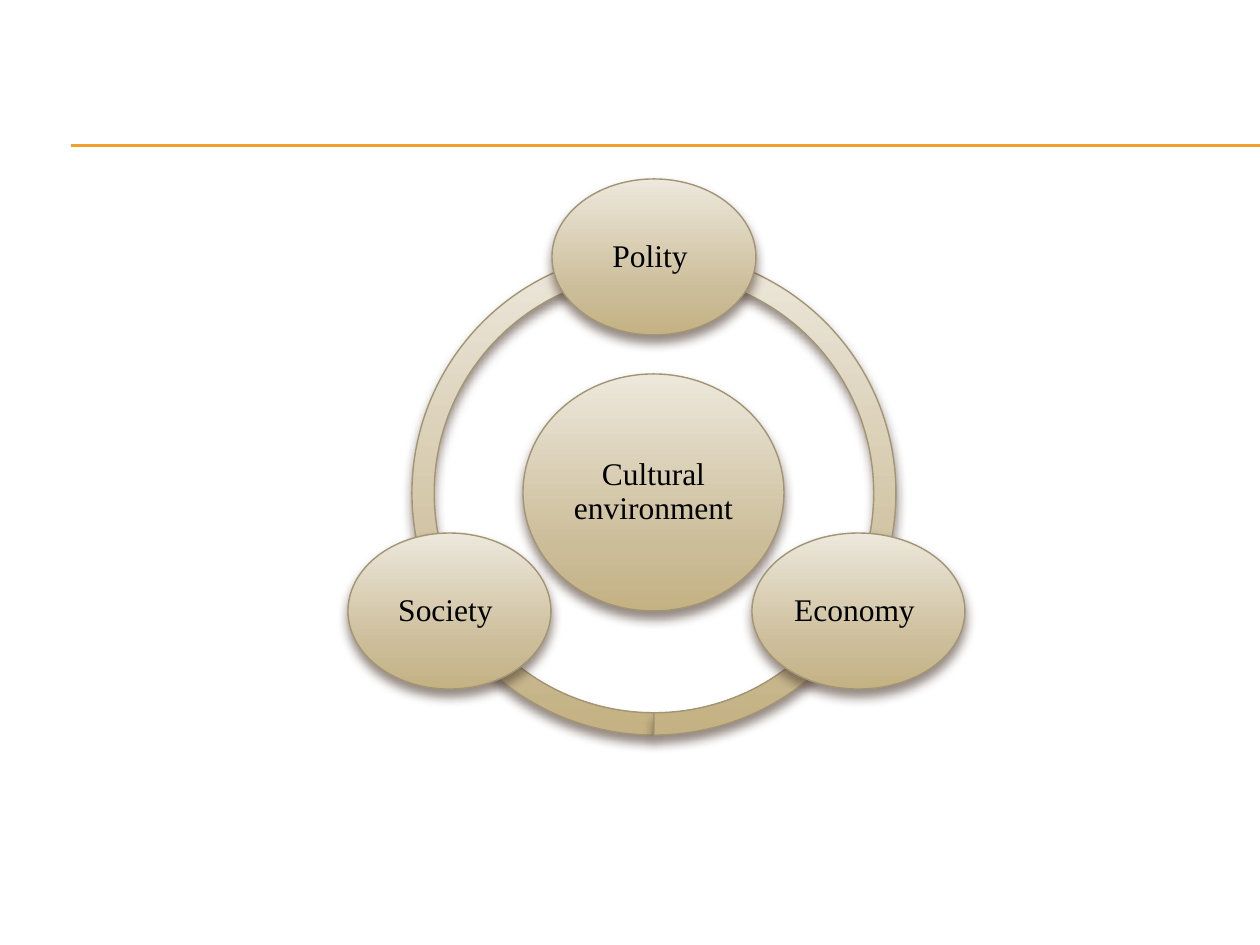
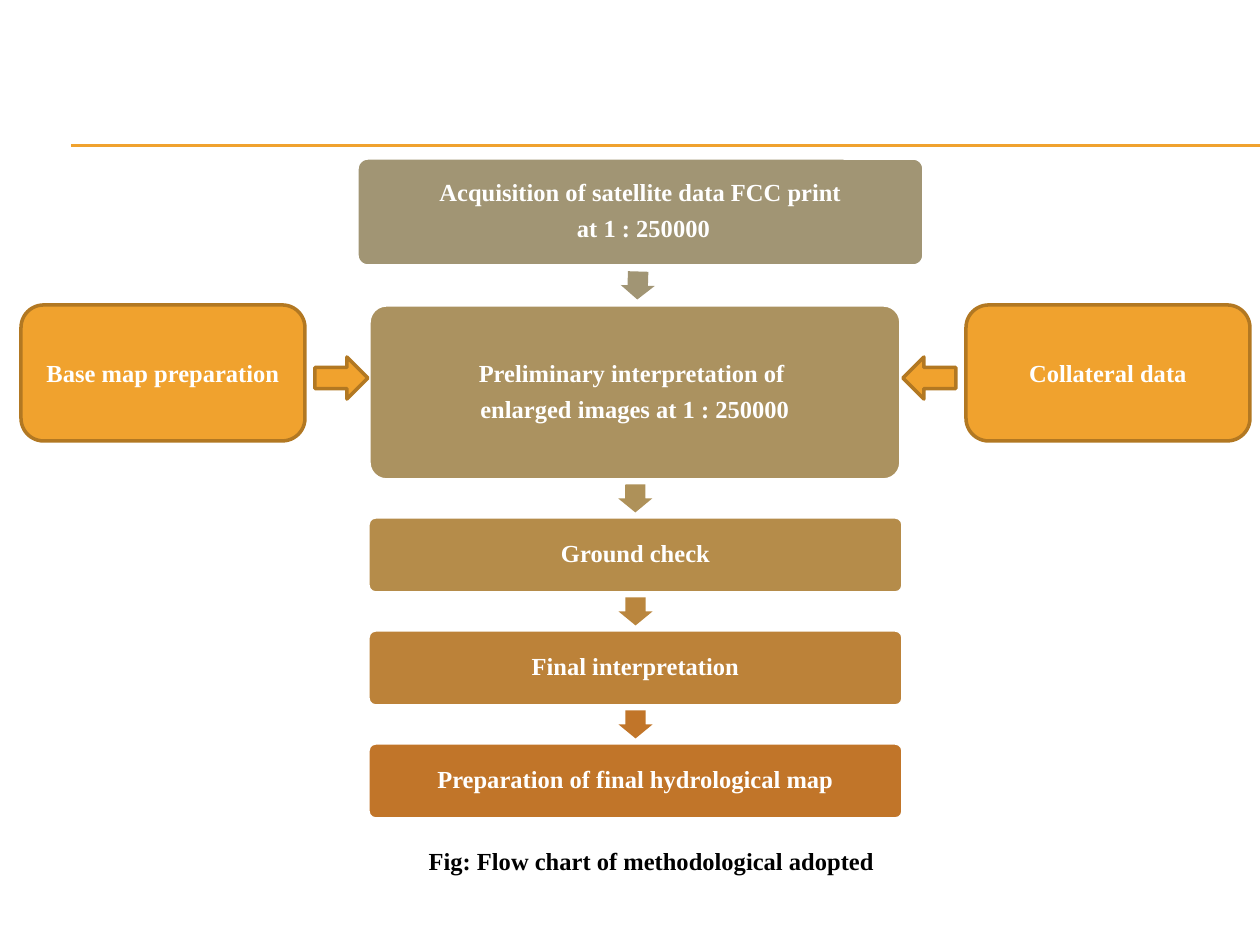
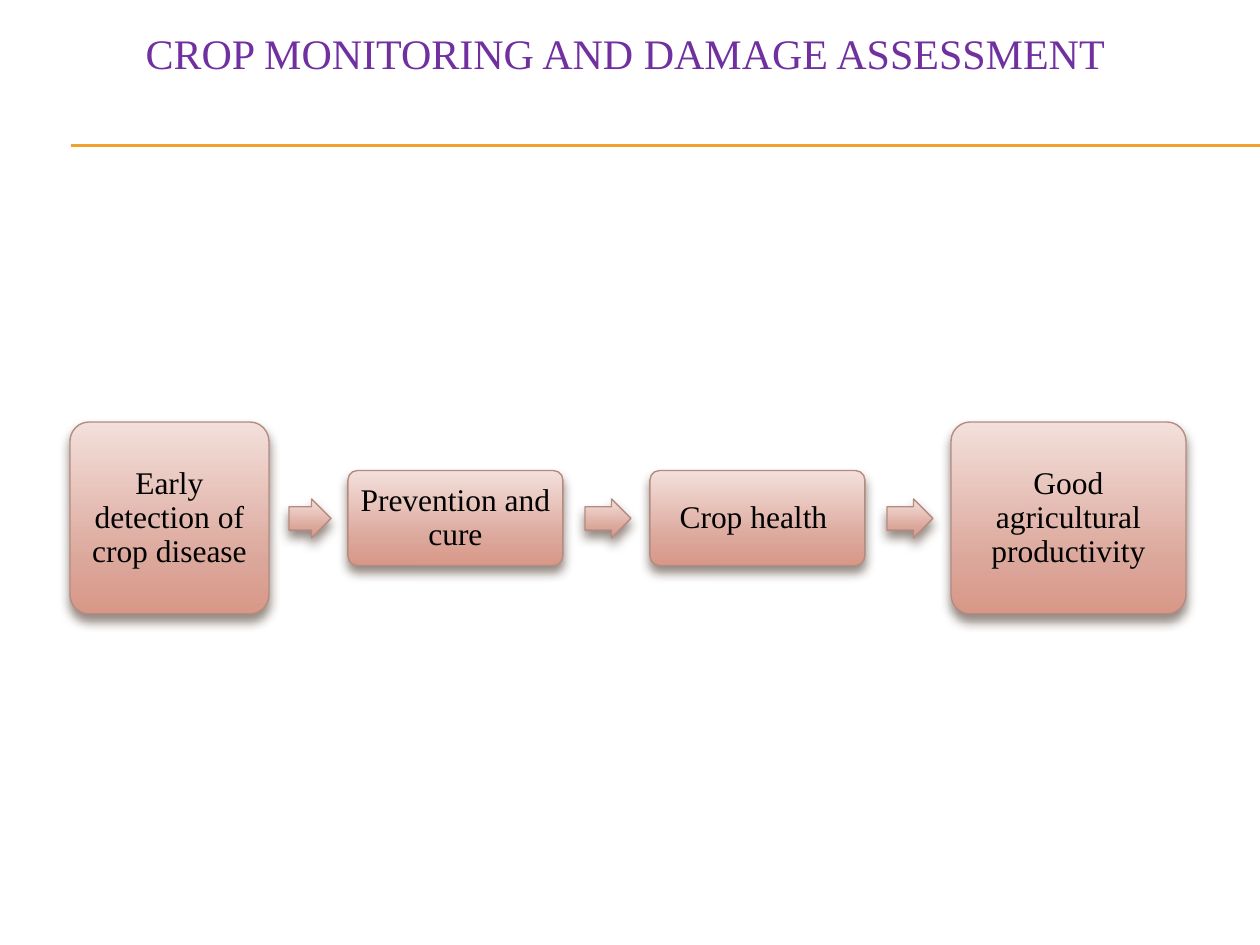
from copy import deepcopy
from math import atan2, degrees

from lxml.etree import SubElement
from pptx import Presentation
from pptx.dml.color import RGBColor
from pptx.enum.shapes import MSO_CONNECTOR, MSO_SHAPE as SHAPE
from pptx.enum.text import MSO_ANCHOR, PP_ALIGN
from pptx.oxml import parse_xml
from pptx.oxml.ns import nsdecls, qn
from pptx.util import Emu, Pt

PX = 914400 / 126
FONT = "Times New Roman"

WHITE = RGBColor(0xFF, 0xFF, 0xFF)
BLACK = RGBColor(0x00, 0x00, 0x00)
PURPLE = RGBColor(0x70, 0x30, 0xA0)
ORANGE = RGBColor(0xF0, 0xA2, 0x2E)
DARK_ORANGE = RGBColor(0xB2, 0x78, 0x22)
KHAKI = RGBColor(0xA1, 0x95, 0x74)
ROSE = RGBColor(0xB5, 0x8B, 0x80)
OLIVE = RGBColor(0xAB, 0x92, 0x60)
OCHRE = RGBColor(0xB5, 0x8C, 0x4A)
BRONZE = RGBColor(0xBC, 0x82, 0x39)
RUST = RGBColor(0xC1, 0x75, 0x29)
ARROW_OLIVE = RGBColor(0xAE, 0x91, 0x59)
ARROW_BRONZE = RGBColor(0xBA, 0x86, 0x3E)
SAND_STOPS = [(0, RGBColor(0xED, 0xE8, 0xDC)), (0.72, RGBColor(0xCC, 0xBD, 0x99)),
              (1, RGBColor(0xC4, 0xB2, 0x84))]
ROSE_STOPS = [(0, RGBColor(0xF3, 0xE0, 0xDB)), (0.72, RGBColor(0xDC, 0xA7, 0x9B)),
              (1, RGBColor(0xD8, 0x97, 0x87))]

SHADOW = (f'<a:outerShdw {nsdecls("a")} blurRad="76200" dist="50800" dir="5400000" '
          'rotWithShape="0"><a:srgbClr val="4E3B30"><a:alpha val="60000"/>'
          '</a:srgbClr></a:outerShdw>')


def draw(slide, kind, box, fill, line=None, width=2, adj=()):
    """Add a shape at box (px); a list of stops as fill gives a shadowed gradient."""
    sp = slide.shapes.add_shape(kind, *[Emu(round(v * PX)) for v in box])
    sp.shadow.inherit = False
    for i, value in enumerate(adj):
        sp.adjustments[i] = value
    if isinstance(fill, list):
        sp.fill.gradient()
        sp.fill.gradient_angle = 270
        gs_lst = sp._element.xpath(".//a:gsLst")[0]
        gs_lst.append(deepcopy(gs_lst[-1]))
        for stop, (position, color) in zip(sp.fill.gradient_stops, fill):
            stop.position = position
            stop.color.rgb = color
        sp._element.spPr.find(qn("a:effectLst")).append(parse_xml(SHADOW))
    else:
        sp.fill.solid()
        sp.fill.fore_color.rgb = fill
    if line is None:
        sp.line.fill.background()
    else:
        sp.line.color.rgb = line
        sp.line.width = Pt(width)
    return sp


def write(sp, lines, size, color, bold=False, inset=None, spacing=None, after=None):
    """Write centred paragraphs; inset is (sides, top and bottom) in px."""
    tf = sp.text_frame
    tf.word_wrap = True
    if inset:
        side, edge = [Emu(round(v * PX)) for v in inset]
        tf.margin_left = tf.margin_right = side
        tf.margin_top = tf.margin_bottom = edge
    for i, line in enumerate(lines):
        p = tf.add_paragraph() if i else tf.paragraphs[0]
        p.alignment = PP_ALIGN.CENTER
        p.line_spacing = spacing
        if after and i < len(lines) - 1:
            p.space_after = Pt(after)
        r = p.add_run()
        r.text = line
        r.font.color.rgb = color
        for name, value in {"name": FONT, "size": Pt(size), "bold": bold}.items():
            setattr(r.font, name, value)


prs = Presentation()
prs.slide_width, prs.slide_height = Emu(round(1260 * PX)), Emu(round(945 * PX))
slides = [prs.slides.add_slide(prs.slide_layouts[6]) for _ in range(3)]
culture, method, crops = slides

# Header rules on every slide
for s in slides:
    for y in (145, 146):
        ends = [Emu(round(v * PX)) for v in (71, y, 1260, y)]
        rule = s.shapes.add_connector(MSO_CONNECTOR.STRAIGHT, *ends)
        rule.line.color.rgb = ORANGE
        rule.line.width = Pt(0.75)
        SubElement(rule._element.spPr, qn("a:effectLst"))

# Cultural environment ring
for start, end in [(90, 162), (18, 90), (162, 18)]:
    # An angle adjustment is stored in 0.6 units per degree
    draw(culture, SHAPE.BLOCK_ARC, (412, 251, 484, 484), SAND_STOPS, KHAKI, 0.79,
         (start * 0.6, end * 0.6, 0.046))
for label, box in [("Cultural environment", (523, 374, 261, 237)),
                   ("Polity ", (552, 179, 204, 156)),
                   ("Economy ", (752, 533, 213, 156)),
                   ("Society ", (348, 533, 203, 156))]:
    sp = draw(culture, SHAPE.OVAL, box, SAND_STOPS, KHAKI, 0.79)
    write(sp, [label], 18, BLACK, inset=(4, 4), spacing=0.9)

# Flow chart of the method: each arrow sits mid-gap and points to the next step
steps = [
    (["Acquisition of satellite data FCC print", " at 1 : 250000"],
     (357, 158, 567, 108), KHAKI, KHAKI),
    (["Preliminary interpretation of ", "enlarged images at 1 : 250000"],
     (369, 305, 532, 175), OLIVE, ARROW_OLIVE),
    (["Ground check"], (368, 517, 535, 76), OCHRE, ARROW_BRONZE),
    (["Final interpretation"], (368, 630, 535, 76), BRONZE, RUST),
    (["Preparation of final hydrological map"], (368, 743, 535, 76), RUST, None),
]
for lines, box, color, _ in steps:
    sp = draw(method, SHAPE.ROUNDED_RECTANGLE, box, color, WHITE, adj=[0.1])
    write(sp, lines, 14, WHITE, True, (8, 8), 0.9, 5.5)
for (_, box, _, color), (_, below, _, _) in zip(steps, steps[1:]):
    (x1, y1), (x2, y2) = [(x + w / 2, y + h / 2) for x, y, w, h in (box, below)]
    middle = (box[1] + box[3] + below[1]) / 2
    arrow = draw(method, SHAPE.RIGHT_ARROW, ((x1 + x2) / 2 - 14, middle - 17, 28, 34),
                 color, adj=(0.6, 0.5))
    arrow.rotation = degrees(atan2(y2 - y1, x2 - x1))

for label, x, arrow_kind, arrow_x in [
        ("Base map preparation", 21, SHAPE.RIGHT_ARROW, 315),
        ("Collateral data", 966, SHAPE.LEFT_ARROW, 903)]:
    sp = draw(method, SHAPE.ROUNDED_RECTANGLE, (x, 305, 284, 136), ORANGE, DARK_ORANGE)
    write(sp, [label], 14, WHITE, True)
    draw(method, arrow_kind, (arrow_x, 357, 53, 42), ORANGE, DARK_ORANGE)

# Crop monitoring chain
MID_Y = 518
for label, x, w, h, side in [
        ("Early detection of crop disease ", 70, 199, 192, 14),
        ("Prevention and cure", 348, 215, 95, 4),
        ("Crop health ", 650, 215, 95, 4),
        ("Good agricultural productivity", 951, 235, 192, 14)]:
    sp = draw(crops, SHAPE.ROUNDED_RECTANGLE, (x, MID_Y - h / 2, w, h), ROSE_STOPS,
              ROSE, 0.79, [0.1])
    write(sp, [label], 18, BLACK, inset=(side, 9), spacing=0.9)
for x, w in [(289, 42), (585, 46), (887, 46)]:
    draw(crops, SHAPE.RIGHT_ARROW, (x, MID_Y - 19, w, 39), ROSE_STOPS, ROSE, 0.79,
         (0.6, 0.5))

# Figure caption and slide title
for s, text, box, size, color, bold in [
        (method, "Fig: Flow chart of methodological adopted", (116, 840, 1071, 43),
         14, BLACK, True),
        (crops, "CROP MONITORING AND DAMAGE ASSESSMENT ", (0, 21, 1260, 63),
         24, PURPLE, False)]:
    sp = s.shapes.add_textbox(*[Emu(round(v * PX)) for v in box])
    sp.text_frame.vertical_anchor = MSO_ANCHOR.TOP
    write(sp, [text], size, color, bold)

prs.save("out.pptx")
